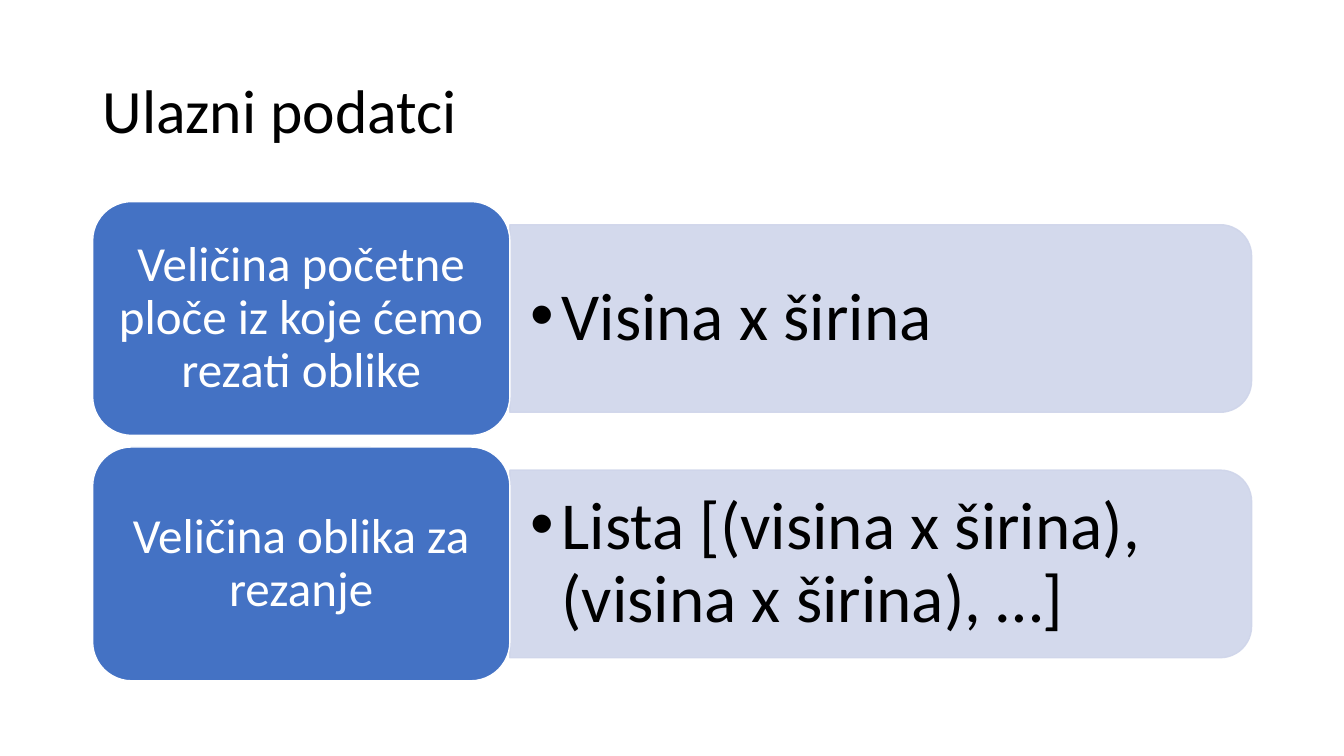
"""Slide listing the input data: two blue labels, each with a pale detail bar."""
from lxml import etree
from pptx import Presentation
from pptx.dml.color import RGBColor
from pptx.enum.shapes import MSO_SHAPE
from pptx.enum.text import MSO_ANCHOR, PP_ALIGN
from pptx.oxml.ns import qn
from pptx.util import Pt

ROUND = MSO_SHAPE.ROUNDED_RECTANGLE
BAR = MSO_SHAPE.ROUND_2_SAME_RECTANGLE
MIDDLE = MSO_ANCHOR.MIDDLE
LEFT, CENTER = PP_ALIGN.LEFT, PP_ALIGN.CENTER
BLACK = RGBColor(0x00, 0x00, 0x00)
WHITE = RGBColor(0xFF, 0xFF, 0xFF)
BLUE = RGBColor(0x44, 0x72, 0xC4)
PALE = RGBColor(0xCF, 0xD5, 0xEA)

ROWS = [
    ("Veličina početne ploče iz koje ćemo rezati oblike", "Visina x širina"),
    ("Veličina oblika za rezanje", "Lista [(visina x širina), (visina x širina), …]"),
]
EDGE, TOP, STEP = 66.2, 144, 175.3
LABEL_W, LABEL_H = 298, 167
BAR_W, BAR_H = 529.8, 134
TEXT_W, TEXT_H = 523.3, 121


def write(shape, text, size, color, align, inset):
    frame = shape.text_frame
    frame.word_wrap = True
    frame.vertical_anchor = MIDDLE
    frame.margin_left = frame.margin_right = Pt(inset)
    frame.margin_top = frame.margin_bottom = Pt(inset / 2)
    frame.text = text
    para = frame.paragraphs[0]
    para.alignment = align
    para.line_spacing = 0.9
    font = para.runs[0].font
    font.name, font.size, font.color.rgb = "Calibri", Pt(size), color
    return para


def draw(kind, x, y, w, h, fill, line):
    shape = slide.shapes.add_shape(kind, Pt(x), Pt(y), Pt(w), Pt(h))
    shape.shadow.inherit = False
    shape.fill.solid()
    shape.fill.fore_color.rgb = fill
    shape.line.color.rgb = line
    shape.line.width = Pt(1)
    return shape


deck = Presentation()
deck.slide_width, deck.slide_height = Pt(960), Pt(540)
slide = deck.slides.add_slide(deck.slide_layouts[6])

title = slide.shapes.add_textbox(Pt(EDGE), Pt(28.8), Pt(828), Pt(104.4))
write(title, "Ulazni podatci", 44, BLACK, LEFT, 7.2)

for row, (name, detail) in enumerate(ROWS):
    top = TOP + row * STEP
    mid = top + LABEL_H / 2
    start = EDGE + LABEL_W

    bar = draw(BAR, start + (BAR_W - BAR_H) / 2, mid - BAR_W / 2, BAR_H, BAR_W, PALE, PALE)
    bar.rotation = 90
    for color in bar._element.spPr.iter(qn("a:srgbClr")):
        etree.SubElement(color, qn("a:alpha"), val="90000")

    box = slide.shapes.add_textbox(Pt(start), Pt(mid - TEXT_H / 2), Pt(TEXT_W), Pt(TEXT_H))
    props = write(box, detail, 48, BLACK, LEFT, 14.4)._p.get_or_add_pPr()
    props.set("marL", str(Pt(22.5)))
    props.set("indent", str(Pt(-22.5)))
    etree.SubElement(props, qn("a:buFont"), typeface="Arial")
    etree.SubElement(props, qn("a:buChar"), char="•")

    label = draw(ROUND, EDGE, top, LABEL_W, LABEL_H, BLUE, WHITE)
    write(label, name, 35, WHITE, CENTER, 10.5)

deck.save("out.pptx")
